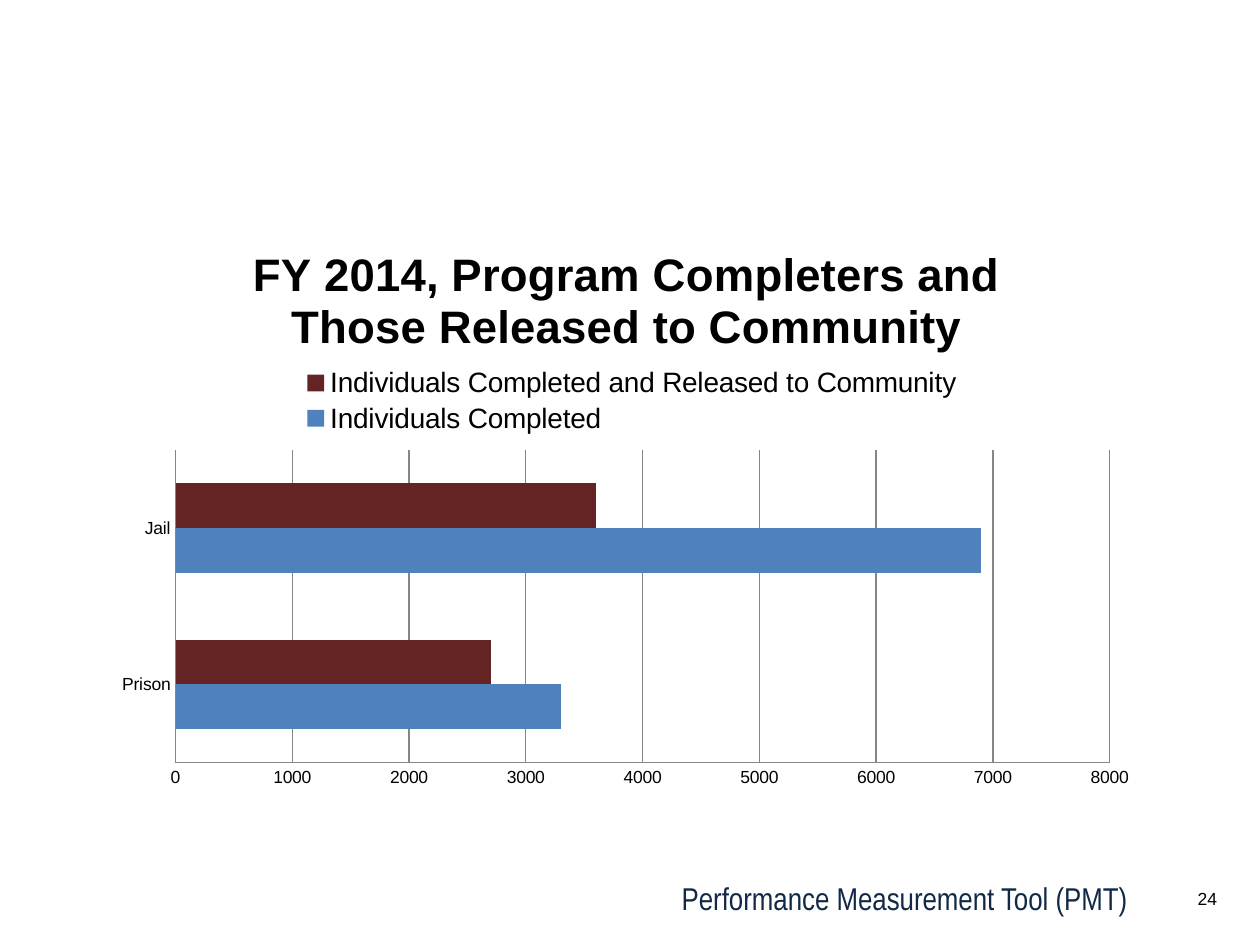
import pptx
import pptx.chart.data
import pptx.dml.color
import pptx.enum.chart
import pptx.enum.text
import pptx.oxml
import pptx.oxml.ns
import pptx.util

Pt = pptx.util.Pt
RGBColor = pptx.dml.color.RGBColor

BLACK = RGBColor(0x00, 0x00, 0x00)
NAVY = RGBColor(0x11, 0x29, 0x47)
BLUE = RGBColor(0x4F, 0x81, 0xBD)
MAROON = RGBColor(0x63, 0x24, 0x23)
GRAY = RGBColor(0x86, 0x86, 0x86)


def set_layout(element, index, target=None, **fractions):
    """Place a chart part by fractions of the chart's width and height."""
    for old_layout in element.findall(pptx.oxml.ns.qn("c:layout")):
        element.remove(old_layout)
    parts = f'<c:layoutTarget val="{target}"/>' if target else ""
    parts += '<c:xMode val="edge"/><c:yMode val="edge"/>'
    parts += "".join(f'<c:{name} val="{value}"/>' for name, value in fractions.items())
    namespace = pptx.oxml.ns.nsdecls("c")
    element.insert(index, pptx.oxml.parse_xml(
        f"<c:layout {namespace}><c:manualLayout>{parts}</c:manualLayout></c:layout>"))


presentation = pptx.Presentation()
presentation.slide_width, presentation.slide_height = Pt(720), Pt(540)
slide = presentation.slides.add_slide(presentation.slide_layouts[6])

# Footer and slide number
footer_texts = [
    ("Performance Measurement Tool (PMT)", 300, 499, 351.5, 29, 18, "Arial Narrow", NAVY, True),
    ("24", 676, 504, 26.5, 19.5, 10, "Arial", BLACK, False),
]
for text, left, top, width, height, size, font_name, color, wrap in footer_texts:
    text_box = slide.shapes.add_textbox(Pt(left), Pt(top), Pt(width), Pt(height))
    text_box.text_frame.word_wrap = wrap
    paragraph = text_box.text_frame.paragraphs[0]
    paragraph.alignment = pptx.enum.text.PP_ALIGN.RIGHT
    run = paragraph.add_run()
    run.text = text
    run.font.size = Pt(size)
    run.font.name = font_name
    run.font.color.rgb = color

# Bar chart
chart_data = pptx.chart.data.CategoryChartData(number_format="###0")
chart_data.categories = ["Prison", "Jail"]
chart_data.add_series("Individuals Completed", [3300, 6900])
chart_data.add_series("Individuals Completed and Released to Community", [2700, 3600])
chart = slide.shapes.add_chart(
    pptx.enum.chart.XL_CHART_TYPE.BAR_CLUSTERED,
    Pt(58.3), Pt(124.6), Pt(599.8), Pt(331.2), chart_data).chart
chart.font.size = Pt(10)
chart.font.name = "Arial"
chart.font.color.rgb = BLACK

plot = chart.plots[0]
plot.gap_width = 150
plot.overlap = 0
plot.vary_by_categories = False
for series, color in zip(plot.series, [BLUE, MAROON]):
    series.format.fill.solid()
    series.format.fill.fore_color.rgb = color

# Axes
value_axis = chart.value_axis
value_axis.minimum_scale = 0
value_axis.maximum_scale = 8000
value_axis.major_unit = 1000
value_axis.has_major_gridlines = True
value_axis.tick_labels.number_format = "###0"
value_axis.tick_labels.number_format_is_linked = False
for axis in (chart.category_axis, value_axis):
    axis.major_tick_mark = pptx.enum.chart.XL_TICK_MARK.NONE
    axis.minor_tick_mark = pptx.enum.chart.XL_TICK_MARK.NONE
for line_format in (chart.category_axis.format, value_axis.format,
                    value_axis.major_gridlines.format):
    line_format.line.color.rgb = GRAY
    line_format.line.width = Pt(0.75)

# Title and legend
chart.has_title = True
run = chart.chart_title.text_frame.paragraphs[0].add_run()
run.text = "FY 2014, Program Completers and Those Released to Community"
run.font.size = Pt(26)
run.font.bold = True
run.font.name = "Arial"
run.font.color.rgb = BLACK
chart.chart_title.include_in_layout = False if hasattr(
    chart.chart_title, "include_in_layout") else None

chart.has_legend = True
chart.legend.position = pptx.enum.chart.XL_LEGEND_POSITION.TOP
chart.legend.include_in_layout = False
chart.legend.font.size = Pt(16)
chart.legend.font.name = "Arial"
chart.legend.font.color.rgb = BLACK

plot_area = chart._chartSpace.chart.plotArea
set_layout(plot_area, 0, target="inner", x=0.07, y=0.4, w=0.89, h=0.54)
set_layout(chart.legend._element, 1, x=0.19, y=0.25, w=0.63, h=0.13)

presentation.save("out.pptx")
